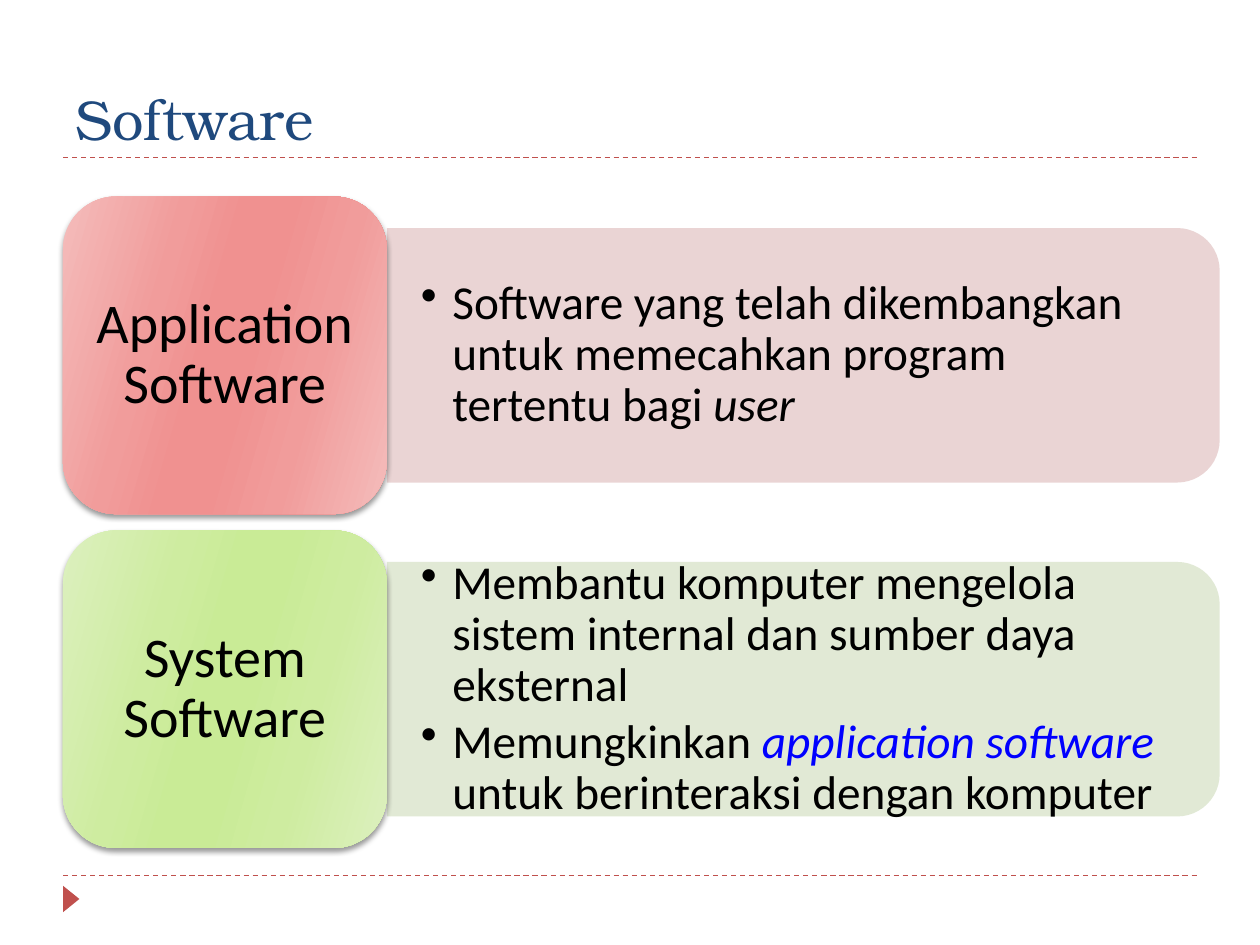
from dataclasses import dataclass

from lxml import etree
from pptx import Presentation
from pptx.dml.color import RGBColor
from pptx.enum.dml import MSO_LINE
from pptx.enum.shapes import MSO_CONNECTOR, MSO_SHAPE
from pptx.enum.text import MSO_ANCHOR, PP_ALIGN
from pptx.oxml.ns import qn
from pptx.util import Inches, Pt

DASH = MSO_LINE.DASH
STRAIGHT = MSO_CONNECTOR.STRAIGHT
TRIANGLE = MSO_SHAPE.ISOSCELES_TRIANGLE
CARD = MSO_SHAPE.ROUNDED_RECTANGLE
PANEL = MSO_SHAPE.ROUND_2_SAME_RECTANGLE
MIDDLE, BOTTOM = MSO_ANCHOR.MIDDLE, MSO_ANCHOR.BOTTOM
CENTER = PP_ALIGN.CENTER


@dataclass(frozen=True)
class Theme:
    heading_font: str = "TeX Gyre Bonum"
    body_font: str = "Calibri"
    heading_size: int = 32
    card_size: int = 32
    point_size: int = 27
    heading: str = "1F497D"
    accent: str = "C0504D"
    text: str = "000000"
    highlight: str = "0000FF"


THEME = Theme()
STOPS = (0, 30, 45, 55, 73, 100)

# Each point is a list of (words, colour, italic)
CATEGORIES = [
    {
        "name": "Application Software",
        "gradient": ("F4BCBB", "F19C9B", "F09190"),
        "panel": "E8D0D0",
        "points": [[
            ("Software yang telah dikembangkan untuk memecahkan program "
             "tertentu bagi ", THEME.text, False),
            ("user", THEME.text, True),
        ]],
    },
    {
        "name": "System Software",
        "gradient": ("DCF0BE", "CEECA0", "C9EB96"),
        "panel": "DEE7D1",
        "points": [
            [("Membantu komputer mengelola sistem internal dan sumber daya "
              "eksternal", THEME.text, False)],
            [("Memungkinkan ", THEME.text, False),
             ("application software ", THEME.highlight, True),
             ("untuk berinteraksi dengan komputer", THEME.text, False)],
        ],
    },
]


def rgb(value):
    return RGBColor.from_string(value)


def sub(parent, tag, **attributes):
    return etree.SubElement(parent, qn(tag), attributes)


def style(font, name, size, color, italic=False):
    font.name, font.size, font.italic = name, Pt(size), italic
    font.color.rgb = rgb(color)


def set_frame(frame, anchor, side, end):
    frame.word_wrap = True
    frame.vertical_anchor = anchor
    frame.margin_left = frame.margin_right = Inches(side)
    frame.margin_top = frame.margin_bottom = Inches(end)


def add_turned(slide, preset, left, top, width, height, color):
    """Shape turned a quarter clockwise; the box is the one seen after turning."""
    shape = slide.shapes.add_shape(
        preset, Inches(left + (width - height) / 2),
        Inches(top + (height - width) / 2), Inches(height), Inches(width))
    shape.rotation = 90
    shape.shadow.inherit = False
    shape.fill.solid()
    shape.fill.fore_color.rgb = rgb(color)
    shape.line.fill.background()
    return shape


def add_rule(slide, left, top, width):
    rule = slide.shapes.add_connector(
        STRAIGHT, Inches(left), Inches(top), Inches(left + width), Inches(top))
    rule.line.color.rgb = rgb(THEME.accent)
    rule.line.width = Pt(0.75)
    rule.line.dash_style = DASH
    sub(rule._element.spPr, "a:effectLst")


def add_heading(slide, left, top, width, height):
    heading = slide.shapes.add_textbox(
        Inches(left), Inches(top), Inches(width), Inches(height))
    frame = heading.text_frame
    set_frame(frame, BOTTOM, 0.1, 0.05)
    frame.text = "Software"
    style(frame.paragraphs[0].runs[0].font, THEME.heading_font,
          THEME.heading_size, THEME.heading)
    add_rule(slide, left, top + height, width)


def add_footer(slide, left, top, width):
    add_rule(slide, left, top, width)
    add_turned(slide, TRIANGLE, left, top + 0.08, 0.13, 0.21, THEME.accent)


def add_panel(slide, left, top, width, height, category):
    panel = add_turned(slide, PANEL, left, top, width, height, category["panel"])
    fill_color = panel._element.spPr.find(qn("a:solidFill"))[0]
    sub(fill_color, "a:alpha", val="90000")

    # Bulleted points
    points = slide.shapes.add_textbox(
        Inches(left), Inches(top + 0.1), Inches(width - 0.09),
        Inches(height - 0.2))
    frame = points.text_frame
    set_frame(frame, MIDDLE, 0.27, 0.14)
    for index, point in enumerate(category["points"]):
        paragraph = frame.paragraphs[0] if index == 0 else frame.add_paragraph()
        paragraph.line_spacing = 0.9
        paragraph.space_after = Pt(3.5)
        properties = paragraph._p.get_or_add_pPr()
        properties.set("marL", str(Inches(0.25)))
        properties.set("indent", str(-Inches(0.25)))
        sub(properties, "a:buChar", char="•")
        for words, color, italic in point:
            run = paragraph.add_run()
            run.text = words
            style(run.font, THEME.body_font, THEME.point_size, color, italic)


def add_card(slide, left, top, width, height, category):
    card = slide.shapes.add_shape(
        CARD, Inches(left), Inches(top), Inches(width), Inches(height))
    card.line.fill.background()

    # Mirrored gradient running 16 degrees clockwise
    card.fill.gradient()
    card.fill.gradient_angle = 344
    stop_list = card._element.spPr.find(qn("a:gradFill")).find(qn("a:gsLst"))
    for stop in list(stop_list):
        stop_list.remove(stop)
    colors = category["gradient"]
    for position, color in zip(STOPS, colors + colors[::-1]):
        stop = sub(stop_list, "a:gs", pos=str(position * 1000))
        sub(stop, "a:srgbClr", val=color)

    # Soft shadow below
    card.shadow.inherit = False
    shadow = sub(card._element.spPr.find(qn("a:effectLst")), "a:outerShdw",
                 blurRad=str(Pt(3)), dist=str(Pt(2)), dir="5400000",
                 rotWithShape="0")
    sub(sub(shadow, "a:srgbClr", val="000000"), "a:alpha", val="40000")

    frame = card.text_frame
    set_frame(frame, MIDDLE, 0.13, 0.07)
    frame.text = category["name"]
    paragraph = frame.paragraphs[0]
    paragraph.alignment = CENTER
    paragraph.line_spacing = 0.9
    style(paragraph.runs[0].font, THEME.body_font, THEME.card_size, THEME.text)


def add_category(slide, left, top, width, height, category):
    card_width, inset = 2.57, 0.25
    add_panel(slide, left + card_width, top + inset, width - card_width,
              height - 2 * inset, category)
    add_card(slide, left, top, card_width, height, category)


def main():
    deck = Presentation()
    deck.slide_width, deck.slide_height = Inches(10), Inches(7.5)
    slide = deck.slides.add_slide(deck.slide_layouts[6])
    add_footer(slide, 0.5, 6.95, 9)
    add_heading(slide, 0.5, 0.17, 9, 1.08)
    for row, category in enumerate(CATEGORIES):
        add_category(slide, 0.5, 1.56 + row * 2.65, 9.18, 2.52, category)
    deck.save("out.pptx")


if __name__ == "__main__":
    main()
